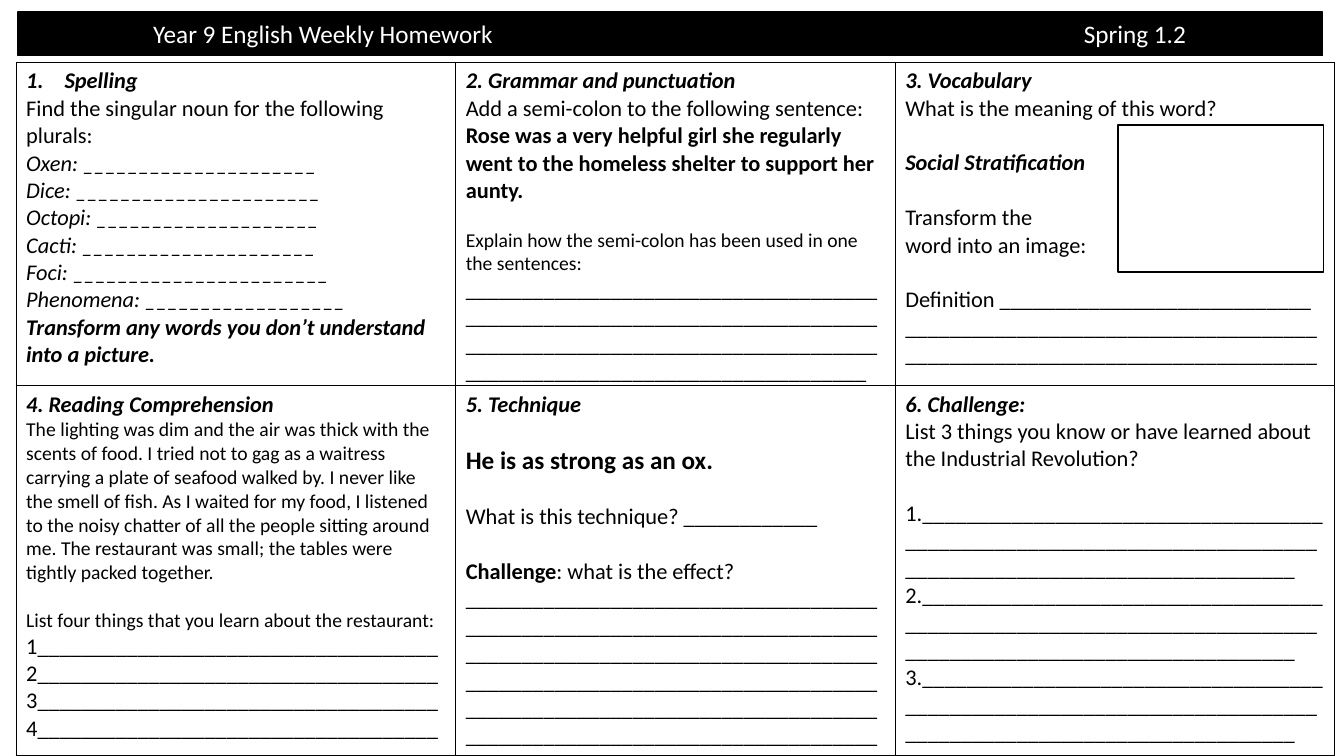
from lxml import etree
from pptx import Presentation
from pptx.dml.color import RGBColor
from pptx.enum.shapes import MSO_SHAPE
from pptx.enum.text import MSO_ANCHOR, PP_ALIGN
from pptx.oxml import parse_xml
from pptx.oxml.ns import nsdecls, qn
from pptx.util import Inches, Pt

RECT = MSO_SHAPE.RECTANGLE
MIDDLE = MSO_ANCHOR.MIDDLE
LEFT = PP_ALIGN.LEFT
BLACK = RGBColor(0, 0, 0)
WHITE = RGBColor(255, 255, 255)
FONT = "Calibri"
GAP, SMALL = 19.5, 17.1
WIDTHS = [4.36] * 3
HEIGHTS = [3.2, 3.67]


def rule(count):
    """Return a writing line of the given length."""
    return "_" * count


def plain(text, size=16, style=""):
    """Return a paragraph of one run with no gap above it."""
    return 0, [(text, size, style)]


def below(gap, text, size=16, style=""):
    """Return a paragraph of one run set below a gap."""
    return gap, [(text, size, style)]


PLURALS = [("Oxen", 21), ("Dice", 22), ("Octopi", 20),
           ("Cacti", 21), ("Foci", 23), ("Phenomena", 18)]

SPELLING = [
    plain("Spelling", 16, "bi"),
    plain("Find the singular noun for the following plurals:"),
    *[plain(f"{word}: {rule(count)}", 16, "i") for word, count in PLURALS],
    plain("Transform any words you don’t understand into a picture.", 16, "bi"),
]
GRAMMAR = [
    plain("2. Grammar and punctuation", 16, "bi"),
    plain("Add a semi-colon to the following sentence:"),
    plain("Rose was a very helpful girl she regularly went to the homeless "
          "shelter to support her aunty.", 16, "b"),
    (SMALL, [("Explain how the semi-colon has been used in one the sentences: ", 14, ""),
             (rule(147), 16, "")]),
]
VOCAB = [
    plain("3. Vocabulary", 16, "bi"),
    plain("What is the meaning of this word?"),
    below(GAP, "Social Stratification", 16, "bi"),
    below(GAP, "Transform the"),
    plain("word into an image:"),
    below(GAP, f"Definition {rule(28)} {rule(74)}"),
]
READING = [
    plain("4. Reading Comprehension", 16, "bi"),
    plain("The lighting was dim and the air was thick with the scents of food. "
          "I tried not to gag as a waitress carrying a plate of seafood walked by. "
          "I never like the smell of fish. As I waited for my food, I listened to "
          "the noisy chatter of all the people sitting around me. The restaurant "
          "was small; the tables were tightly packed together.", 14),
    below(SMALL, "List four things that you learn about the restaurant:", 14),
    plain("".join(f"{n}{rule(36)}" for n in range(1, 5))),
]
TECHNIQUE = [
    plain("5. Technique", 16, "bi"),
    below(GAP, "He is as strong as an ox.", 18, "b"),
    below(GAP, f"What is this technique? {rule(12)}"),
    (GAP, [("Challenge", 16, "b"), (f": what is the effect? {rule(222)}", 16, "")]),
]
CHALLENGE = [
    plain("6. Challenge:", 16, "bi"),
    plain("List 3 things you know or have learned about the Industrial Revolution?"),
    *[below(0 if n > 1 else GAP, f"{n}.{rule(108)}") for n in range(1, 4)],
]
TASKS = [[SPELLING, GRAMMAR, VOCAB], [READING, TECHNIQUE, CHALLENGE]]


def add_run(para, text, size, style="", color=BLACK):
    """Add one run; style holds b for bold and i for italic."""
    run = para.add_run()
    run.text = text
    font = run.font
    font.name, font.size = FONT, Pt(size)
    font.bold, font.italic = "b" in style, "i" in style
    font.color.rgb = color


def add_rect(slide, box, fill):
    """Add a black-edged rectangle and return it."""
    shape = slide.shapes.add_shape(RECT, *map(Inches, box))
    shape.shadow.inherit = False
    shape.fill.solid()
    shape.fill.fore_color.rgb = fill
    shape.line.color.rgb = BLACK
    shape.line.width = Pt(1)
    return shape


def add_banner(slide, box):
    """Add the title bar, with the term at a tab stop."""
    frame = add_rect(slide, box, BLACK).text_frame
    frame.vertical_anchor = MIDDLE
    frame.margin_left = Inches(1.34)
    frame.margin_top = frame.margin_bottom = 0
    para = frame.paragraphs[0]
    para.alignment = LEFT
    add_run(para, "Year 9 English Weekly Homework\tSpring 1.2", 18, color=WHITE)
    tabs = etree.SubElement(para._p.get_or_add_pPr(), qn("a:tabLst"))
    etree.SubElement(tabs, qn("a:tab"), pos=str(Inches(9.23)), algn="l")


def add_edges(cell):
    """Draw a thin black line on all four sides of a cell."""
    props = cell._tc.get_or_add_tcPr()
    for place, side in enumerate("LRTB"):
        props.insert(place, parse_xml(
            f'<a:ln{side} {nsdecls("a")} w="{Pt(1)}"><a:solidFill>'
            f'<a:srgbClr val="{BLACK}"/></a:solidFill></a:ln{side}>'))


def fill_cell(cell, paras):
    """Write one task into a cell."""
    cell.fill.solid()
    cell.fill.fore_color.rgb = WHITE
    cell.margin_bottom = 0
    add_edges(cell)
    frame = cell.text_frame
    for index, (gap, runs) in enumerate(paras):
        para = frame.add_paragraph() if index else frame.paragraphs[0]
        if gap:
            para.space_before = Pt(gap)
        for run in runs:
            add_run(para, *run)


def add_number(para):
    """Number a paragraph automatically with a hanging indent."""
    props = para._p.get_or_add_pPr()
    props.set("marL", str(Inches(0.38)))
    props.set("indent", str(-Inches(0.38)))
    etree.SubElement(props, qn("a:buAutoNum"), type="arabicPeriod")


def add_tasks(slide, left, top):
    """Add the grid of six tasks and the drawing box of the third."""
    box = left, top, sum(WIDTHS), sum(HEIGHTS)
    table = slide.shapes.add_table(len(HEIGHTS), len(WIDTHS), *map(Inches, box)).table
    table.first_row = table.horz_banding = False
    for col, width in zip(table.columns, WIDTHS):
        col.width = Inches(width)
    for row, height, tasks in zip(table.rows, HEIGHTS, TASKS):
        row.height = Inches(height)
        for cell, paras in zip(row.cells, tasks):
            fill_cell(cell, paras)
    add_number(table.cell(0, 0).text_frame.paragraphs[0])
    add_rect(slide, (left + 10.93, top + 0.62, 2.04, 1.46), WHITE)


def main():
    """Build and save the homework slide."""
    deck = Presentation()
    deck.slide_width, deck.slide_height = Inches(13.33), Inches(7.5)
    slide = deck.slides.add_slide(deck.slide_layouts[6])
    add_banner(slide, (0.18, 0.12, 12.94, 0.43))
    add_tasks(slide, 0.16, 0.62)
    deck.save("out.pptx")


if __name__ == "__main__":
    main()
